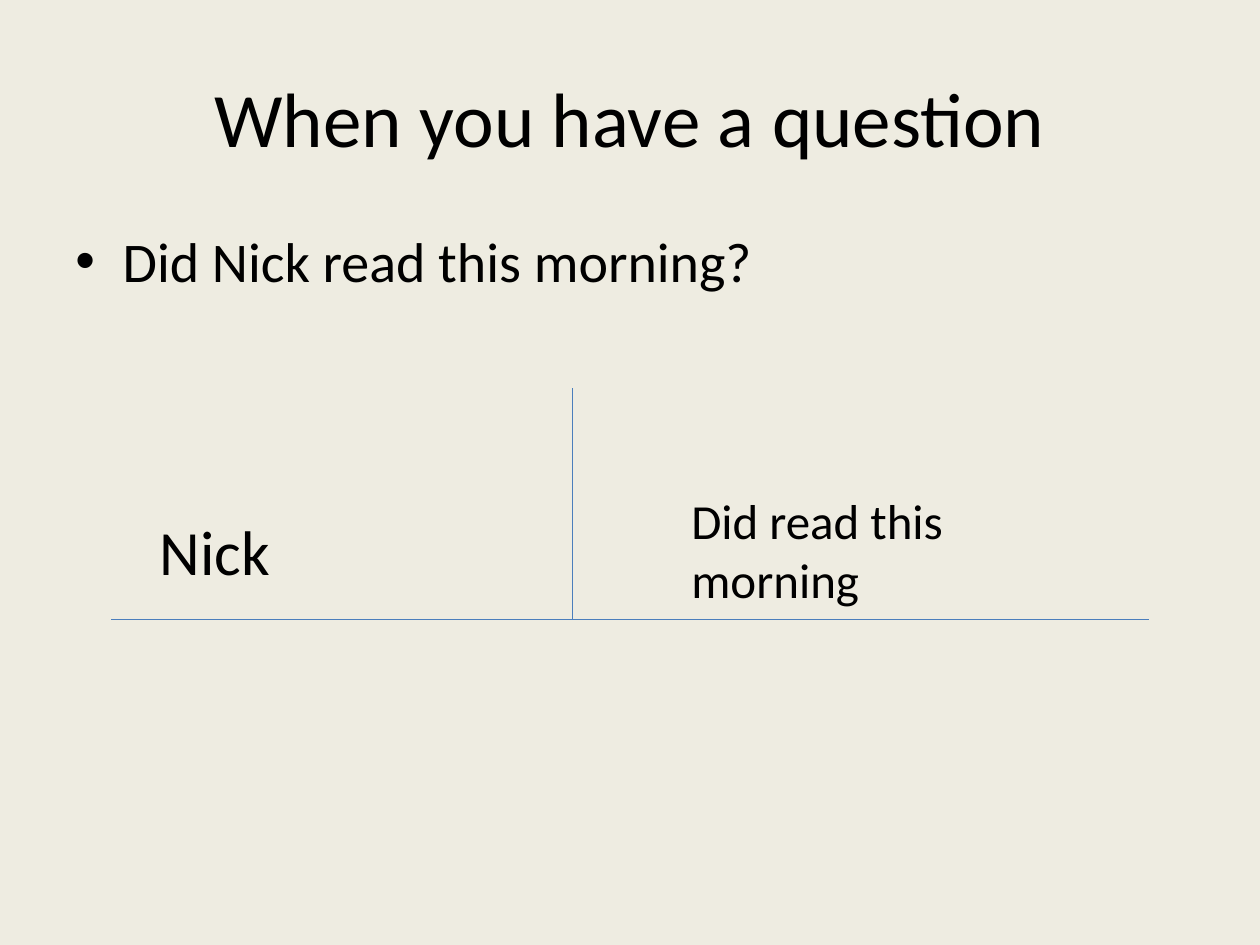
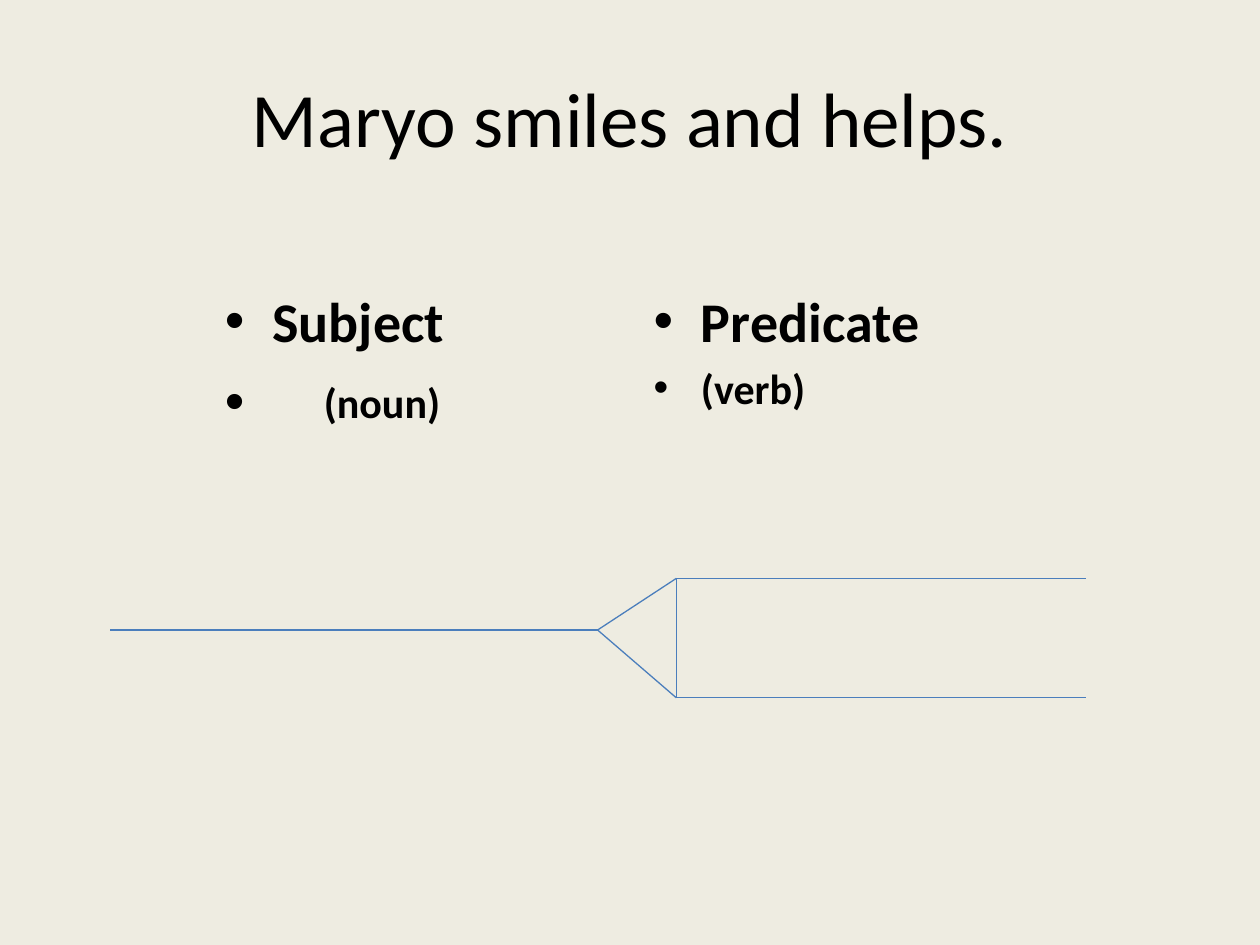
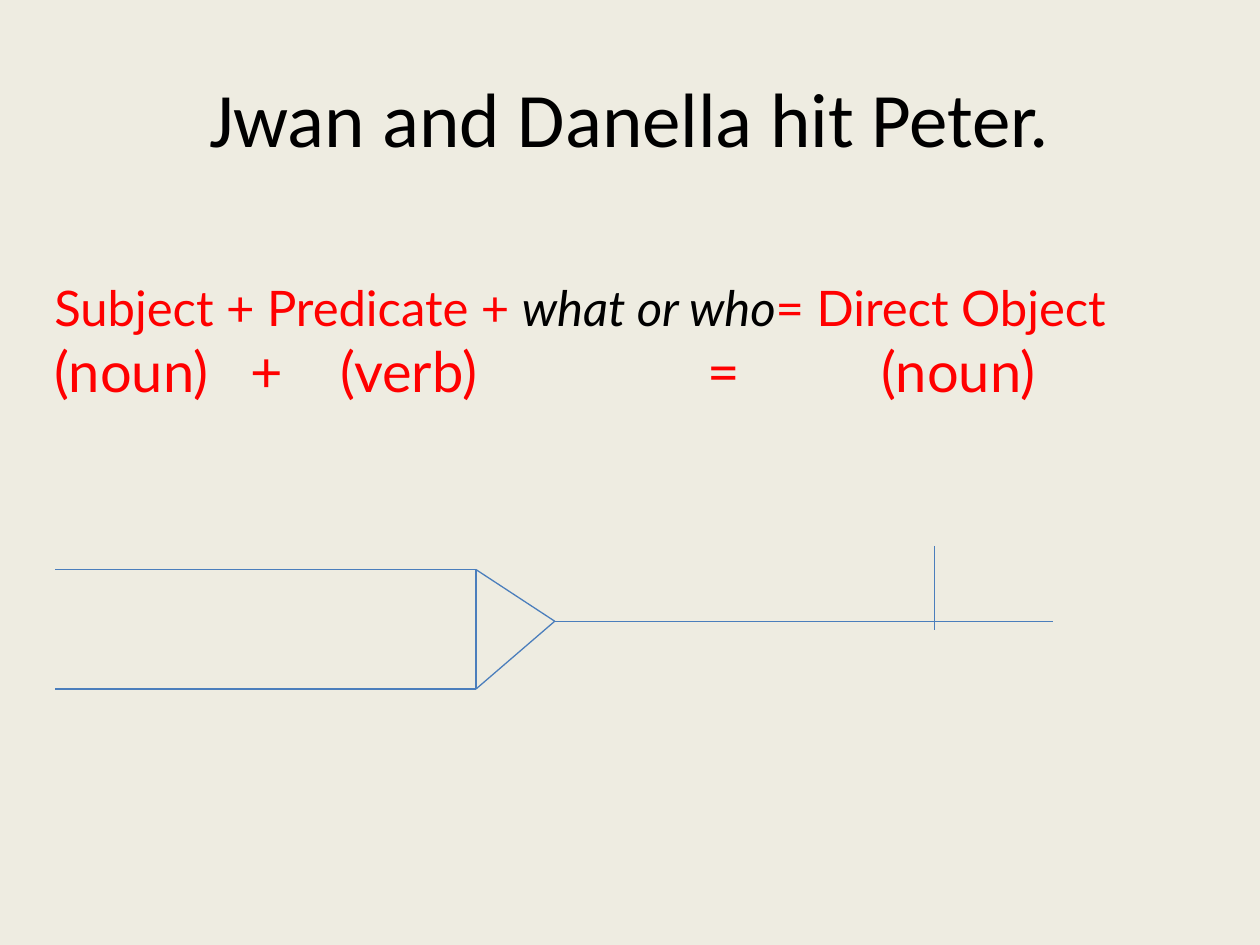
from pptx import Presentation
from pptx.dml.color import RGBColor as RGB
from pptx.enum.shapes import MSO_CONNECTOR as CONN
from pptx.enum.text import MSO_ANCHOR as ANCHOR, PP_ALIGN as ALIGN
from pptx.oxml.ns import qn
from pptx.util import Pt
from lxml.etree import SubElement

COLORS = {"paper": "EEECE1", "ink": "000000", "red": "FF0000", "line": "4B7EBC"}
FONT = "Calibri"
TITLE_BOX = (36, 21.6, 648, 90)
BULLET_INDENT = 27


def add_text(s, text, box, size=32, font=FONT, color="ink", bold=False,
             align=ALIGN.LEFT, anchor=ANCHOR.TOP, bullet=False):
    """text is a string or a list of paragraphs, each a dict with its runs and own format."""
    sp = s.shapes.add_textbox(*[Pt(v) for v in box])
    tf = sp.text_frame
    tf.word_wrap = True
    tf.vertical_anchor = anchor
    paras = [{"runs": [(text, {})]}] if isinstance(text, str) else text
    for i, para in enumerate(paras):
        p = tf.paragraphs[0] if i == 0 else tf.add_paragraph()
        p.alignment = align
        p.space_before = Pt(para.get("before", 0))
        pPr = p._p.get_or_add_pPr()
        if bullet:
            indent = Pt(para.get("indent", BULLET_INDENT))
            pPr.set("marL", str(indent))
            pPr.set("indent", str(-indent))
            if "bullet_pct" in para:
                SubElement(pPr, qn("a:buSzPct"), val=str(para["bullet_pct"] * 1000))
            SubElement(pPr, qn("a:buFont"), typeface="Arial")
            SubElement(pPr, qn("a:buChar"), char="•")
        if "tabs" in para:
            tabs = SubElement(pPr, qn("a:tabLst"))
            for pos in para["tabs"]:
                SubElement(tabs, qn("a:tab"), pos=str(Pt(pos)), algn="l")
        for words, look in para["runs"]:
            r = p.add_run()
            r.text = words
            r.font.name = font
            r.font.size = Pt(para.get("size", size))
            r.font.bold = bold
            r.font.italic = look.get("italic", False)
            r.font.color.rgb = RGB.from_string(COLORS[look.get("color", color)])


def add_line(s, x1, y1, x2, y2):
    c = s.shapes.add_connector(CONN.STRAIGHT, Pt(x1), Pt(y1), Pt(x2), Pt(y2))
    c.line.color.rgb = RGB.from_string(COLORS["line"])
    c.line.width = Pt(0.75)
    SubElement(c._element.spPr, qn("a:effectLst"))


prs = Presentation()
prs.slide_width, prs.slide_height = Pt(720), Pt(540)

# Background and title of every slide
slides = []
for title in ("When you have a question", "Maryo smiles and helps.",
              "Jwan and Danella hit Peter."):
    s = prs.slides.add_slide(prs.slide_layouts[6])
    s.background.fill.solid()
    s.background.fill.fore_color.rgb = RGB.from_string(COLORS["paper"])
    add_text(s, title, TITLE_BOX, size=44, align=ALIGN.CENTER, anchor=ANCHOR.MIDDLE)
    slides.append(s)
question, two_verbs, two_subjects = slides

# Question: sentence, base line with divider, subject and predicate
add_text(question, "Did Nick read this morning?", (36, 126, 648, 356.5), bullet=True)
add_line(question, 63.5, 354, 656.5, 354)
add_line(question, 327, 222, 327, 354)
add_text(question, "Nick", (84, 289.5, 159, 51), size=36)
add_text(question, "Did read this morning", (388, 277, 237, 75), size=28)

# Two verbs: a column for each part of the sentence
columns = [
    (121.5, "Subject", "(noun)", {"before": 13, "indent": 56.5, "bullet_pct": 133}),
    (366.5, "Predicate", "(verb)", {"before": 5}),
]
for x, part, word_class, look in columns:
    add_text(two_verbs, [{"runs": [(part, {})]},
                         {"runs": [(word_class, {})], "size": 24, **look}],
             (x, 160, 252, 138), bold=True, bullet=True)

# Two subjects: formula of the sentence
add_text(two_subjects, [
    {"runs": [("Subject + Predicate + ", {}),
              ("what or who", {"color": "ink", "italic": True}),
              ("= Direct Object", {})], "size": 28},
    {"runs": [("(noun)\t+\t(verb)\t=\t(noun)", {})], "tabs": (112, 163.5, 373, 472.5)},
], (24, 155, 666, 80), font="Lato", color="red")

# Forks: tip, direction in which the branches open, branch end, stem end
forks = [
    (two_verbs, 341.5, 360, 1, 620.5, 63),
    (two_subjects, 317, 355, -1, 31.5, 602),
]
for s, tip_x, tip_y, side, branch_end, stem_end in forks:
    fork_x = tip_x + side * 45
    top, bottom = tip_y - 29.5, tip_y + 38.75
    for y in (top, bottom):
        add_line(s, branch_end, y, fork_x, y)
        add_line(s, fork_x, y, tip_x, tip_y)
    add_line(s, fork_x, top, fork_x, bottom)
    add_line(s, tip_x, tip_y, stem_end, tip_y)

# Divider before the direct object
add_line(two_subjects, 534, 312, 534, 360)

prs.save("out.pptx")
